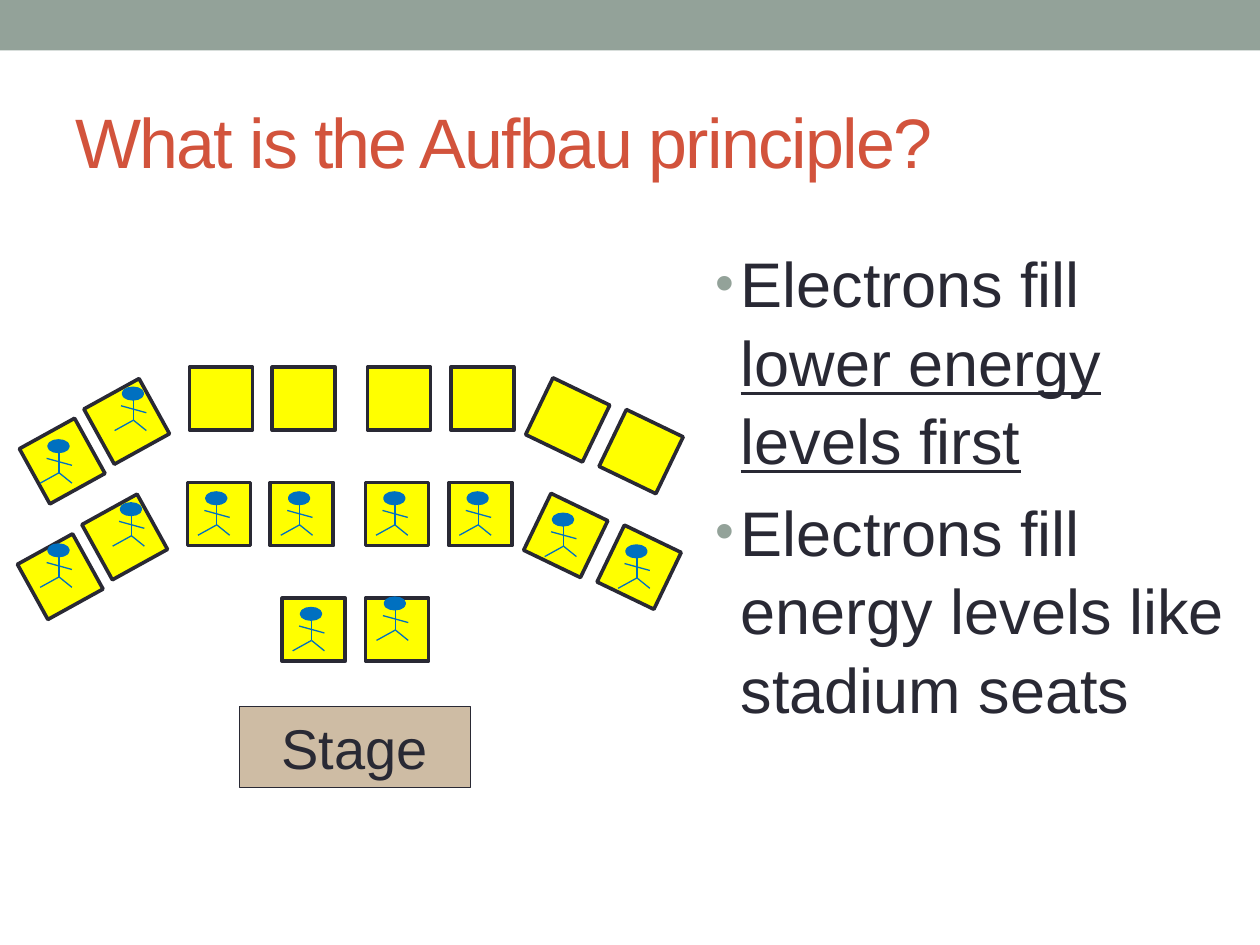
from collections import namedtuple

from lxml import etree
from pptx import Presentation
from pptx.dml.color import RGBColor
from pptx.enum import shapes, text
from pptx.oxml.ns import qn
from pptx.util import Cm, Pt

COLORS = {
    "band": "93A299", "title": "D2533C", "ink": "292934",
    "stage": "CEBCA4", "seat": "FFFF00", "electron": "0070C0",
}
FONT = "Arial"
SEAT_SIZE = 1.27
ROW_PITCH = 2.33
BACK_ROW_SHIFT = 0.04

Box = namedtuple("Box", "left top width height")
Seat = namedtuple("Seat", "x y turn sitter", defaults=(0, 0, (0.21, 0.21)))

# Seats of one curved row; sitter is the electron's offset within its seat.
CURVED_ROW = [
    Seat(0, 1.26, -28.9, (0.23, 0)),
    Seat(1.3, 0.46, -28.9, (0.39, -0.03)),
    Seat(3.2), Seat(4.87), Seat(6.79), Seat(8.47),
    Seat(10.19, 0.43, 25.7), Seat(11.67, 1.07, 25.7),
]
BACK_LEFT_SITTER = (0.19, 0.23)
FRONT_ROW = [Seat(5.11), Seat(6.79, sitter=(0.22, 0))]


def color(name):
    return RGBColor.from_string(COLORS[name])


def add_filled(parent, kind, box, fill, line=None, line_width=0.75):
    shape = parent.add_shape(kind, *map(Cm, box))
    shape.shadow.inherit = False
    shape.fill.solid()
    shape.fill.fore_color.rgb = color(fill)
    if line:
        shape.line.color.rgb = color(line)
        shape.line.width = Pt(line_width)
    else:
        shape.line.fill.background()
    return shape


def add_span(para, words, size, name, underline=None):
    span = para.add_run()
    span.text = words
    span.font.name = FONT
    span.font.size = Pt(size)
    span.font.color.rgb = color(name)
    span.font.underline = underline
    return span


def add_text_frame(page, box):
    frame = page.shapes.add_textbox(*map(Cm, box)).text_frame
    frame.word_wrap = True
    return frame


def add_title(page, box):
    frame = add_text_frame(page, box)
    frame.vertical_anchor = text.MSO_ANCHOR.MIDDLE
    span = add_span(frame.paragraphs[0], "What is the Aufbau principle?", 40, "title")
    span.font._element.set("spc", "-100")


def set_bullet(para):
    props = para._p.get_or_add_pPr()
    props.set("marL", str(Cm(0.51)))
    props.set("indent", str(-Cm(0.51)))
    tint = etree.SubElement(props, qn("a:buClr"))
    etree.SubElement(tint, qn("a:srgbClr"), val=COLORS["band"])
    etree.SubElement(props, qn("a:buSzPct"), val="85000")
    etree.SubElement(props, qn("a:buFont"), typeface=FONT)
    etree.SubElement(props, qn("a:buChar"), char="•")


def add_points(page, box):
    frame = add_text_frame(page, box)
    points = [
        [("Electrons fill ", None), ("lower energy levels first", True)],
        [("Electrons fill energy levels like stadium seats", None)],
    ]
    for index, spans in enumerate(points):
        para = frame.add_paragraph() if index else frame.paragraphs[0]
        para.line_spacing = 1.04
        para.space_before = Pt(7.2)
        set_bullet(para)
        for words, underline in spans:
            add_span(para, words, 36, "ink", underline)


def add_stage(page, box):
    stage = add_filled(page.shapes, shapes.MSO_SHAPE.RECTANGLE, box, "stage", "ink")
    frame = stage.text_frame
    frame.vertical_anchor = text.MSO_ANCHOR.TOP
    para = frame.paragraphs[0]
    para.alignment = text.PP_ALIGN.CENTER
    add_span(para, "Stage", 32, "ink")


def add_electron(page, left, top):
    """Draw one stick figure whose group starts at left, top."""
    figure = page.shapes.add_group_shape().shapes
    neck, hip = (0.38, 0.21), (0.38, 0.64)
    limbs = [
        (neck, hip), (hip, (0, 0.85)), (hip, (0.64, 0.85)),
        ((0.13, 0.35), (0.64, 0.49)),
    ]
    for (x1, y1), (x2, y2) in limbs:
        limb = figure.add_connector(
            shapes.MSO_CONNECTOR.STRAIGHT,
            Cm(left + x1), Cm(top + y1), Cm(left + x2), Cm(top + y2))
        limb.line.color.rgb = color("electron")
        limb.line.width = Pt(0.75)
        etree.SubElement(limb._element.spPr, qn("a:effectLst"))
    head = Box(left + 0.18, top, 0.38, 0.21)
    add_filled(figure, shapes.MSO_SHAPE.OVAL, head, "electron", "electron", 2.08)


def add_seating(page, box):
    """Draw three rows of seats, then the electrons that fill them."""
    back = [seat._replace(x=seat.x + BACK_ROW_SHIFT) for seat in CURVED_ROW]
    back[0] = back[0]._replace(sitter=BACK_LEFT_SITTER)
    rows = [(2, FRONT_ROW, 2), (1, CURVED_ROW, 8), (0, back, 2)]
    sitters = []
    for row, seats, filled in rows:
        for index, seat in enumerate(seats):
            left = box.left + seat.x
            top = box.top + row * ROW_PITCH + seat.y
            chair = add_filled(
                page.shapes, shapes.MSO_SHAPE.FLOWCHART_PROCESS,
                Box(left, top, SEAT_SIZE, SEAT_SIZE), "seat", "ink", 2.08)
            chair.rotation = seat.turn
            if index < filled:
                sitters.append((left + seat.sitter[0], top + seat.sitter[1]))
    for left, top in sitters:
        add_electron(page, left, top)


def main():
    deck = Presentation()
    deck.slide_width, deck.slide_height = Cm(25.4), Cm(19.05)
    page = deck.slides.add_slide(deck.slide_layouts[6])
    add_filled(page.shapes, shapes.MSO_SHAPE.RECTANGLE, Box(0, 0, 25.4, 1.02), "band")
    add_points(page, Box(14.17, 4.75, 11.23, 12.24))
    add_title(page, Box(1.27, 1.47, 22.86, 2.74))
    add_stage(page, Box(4.83, 14.25, 4.65, 1.63))
    add_seating(page, Box(0.58, 7.4, 12.94, 5.93))
    deck.save("out.pptx")


if __name__ == "__main__":
    main()
